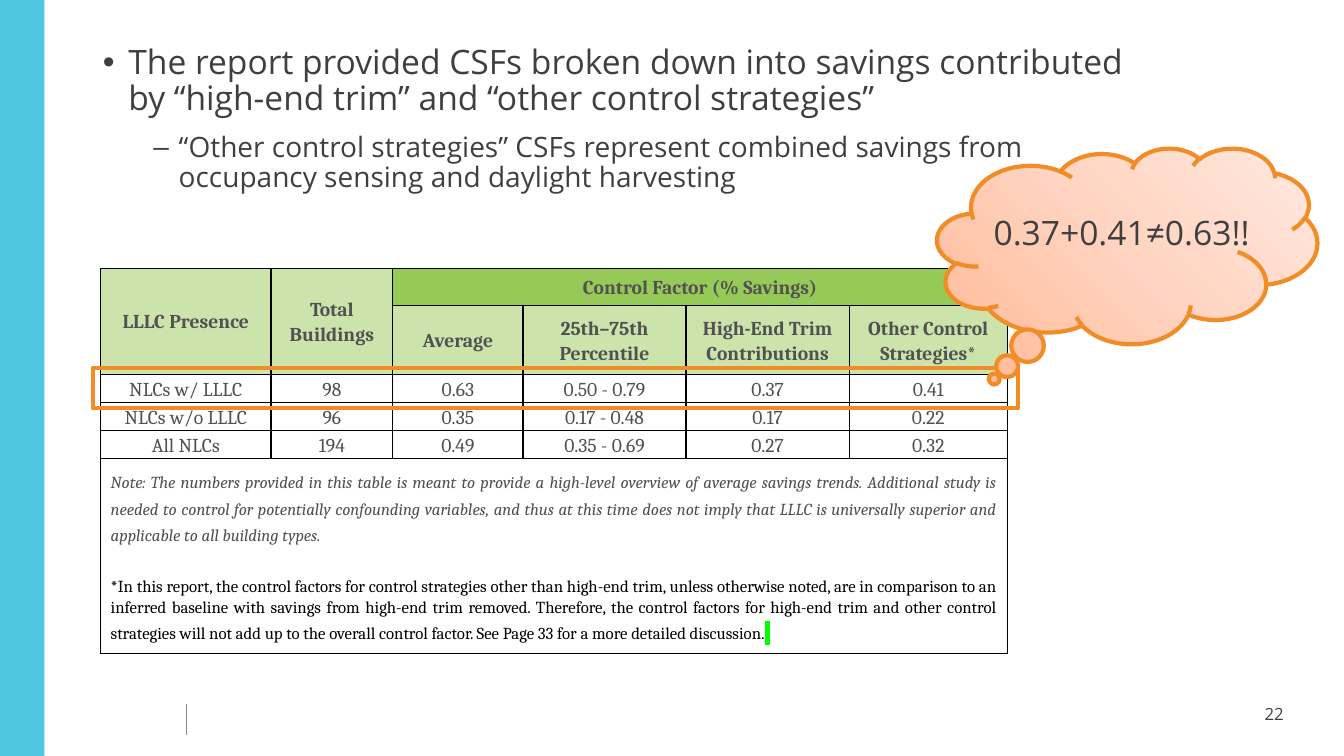
from copy import deepcopy
from pptx import Presentation
from pptx.dml.color import RGBColor
from pptx.enum.shapes import MSO_CONNECTOR, MSO_SHAPE
from pptx.enum.text import MSO_ANCHOR, MSO_AUTO_SIZE, PP_ALIGN
from pptx.oxml import parse_xml
from pptx.oxml.ns import nsdecls, qn
from pptx.util import Cm, Pt

# Content
BULLETS = [
    ("The report provided CSFs broken down into savings contributed by “high-end trim” and “other control strategies”",
     dict(level=0, bullet="•", left=0.64, size=24, before=0)),
    ("“Other control strategies” CSFs represent combined savings from occupancy sensing and daylight harvesting",
     dict(level=1, bullet="–", left=1.91, size=20, before=5)),
]
HEADERS = {  # (row, column): (text, fill, last row, last column)
    (0, 0): ("LLLC Presence", "CCE4AC", 1, 0),
    (0, 1): ("Total\nBuildings", "CCE4AC", 1, 1),
    (0, 2): ("Control Factor (% Savings)", "96CA58", 0, 5),
    (1, 2): ("Average", "CCE4AC", 1, 2),
    (1, 3): ("25th–75th Percentile", "CCE4AC", 1, 3),
    (1, 4): ("High-End Trim\nContributions", "CCE4AC", 1, 4),
    (1, 5): ("Other Control Strategies*", "CCE4AC", 1, 5),
}
DATA = [
    ("NLCs w/ LLLC", "98", "0.63", "0.50 - 0.79", "0.37", "0.41"),
    ("NLCs w/o LLLC", "96", "0.35", "0.17 - 0.48", "0.17", "0.22"),
    ("All NLCs", "194", "0.49", "0.35 - 0.69", "0.27", "0.32"),
]
NOTE = (
    "Note: The numbers provided in this table is meant to provide a high-level overview of average savings trends. "
    "Additional study is needed to control for potentially confounding variables, and thus at this time does not "
    "imply that LLLC is universally superior and applicable to all building types.")
FOOTNOTE = (
    "*In this report, the control factors for control strategies other than high-end trim, unless otherwise noted, "
    "are in comparison to an inferred baseline with savings from high-end trim removed. Therefore, the control "
    "factors for high-end trim and other control strategies will not add up to the overall control factor. "
    "See Page 33 for a more detailed discussion.")
CALLOUT = "0.37+0.41≠0.63!!"
PAGE = "22"

# Format
COLUMNS = [4.29, 3.07, 3.28, 4.11, 4.11, 3.99]
ROWS = [0.94, 1.73, 0.71, 0.71, 0.71, 4.9]
GRADIENT = [(0, "FFBB99"), (50, "FFD4C1"), (100, "FFE9E0")]
ORANGE, DARK, GREY = "F28C27", "3F3F3F", "515151"
SANS, SERIF = "Open Sans", "Cambria"


def rgb(value):
    return RGBColor.from_string(value)


def add_run(p, text, color, **fmt):
    r = p.add_run()
    r.text = text
    for name, value in fmt.items():
        setattr(r.font, name, value)
    r.font.color.rgb = rgb(color)
    return r


def add_box(kind, box, fill=None, line=None):
    sp = s.shapes.add_shape(kind, *map(Cm, box))
    sp.shadow.inherit = False
    if fill:
        sp.fill.solid()
        sp.fill.fore_color.rgb = rgb(fill)
    else:
        sp.fill.background()
    if line:
        sp.line.color.rgb, sp.line.width = rgb(line), Pt(3)
    else:
        sp.line.fill.background()
    return sp


def add_label(text, box, size):
    tf = s.shapes.add_textbox(*map(Cm, box)).text_frame
    tf.word_wrap = True
    add_run(tf.paragraphs[0], text, DARK, name=SANS, size=Pt(size))


def set_cell(cell, inset, fill=None):
    cell.vertical_anchor = MSO_ANCHOR.MIDDLE
    cell.margin_left = cell.margin_right = Cm(inset[0])
    cell.margin_top = cell.margin_bottom = Cm(inset[1])
    if fill:
        cell.fill.solid()
        cell.fill.fore_color.rgb = rgb(fill)


def write_cell(cell, text, bold):
    for i, line in enumerate(text.split("\n")):
        p = cell.text_frame.paragraphs[0] if i == 0 else cell.text_frame.add_paragraph()
        p.alignment, p.line_spacing = PP_ALIGN.CENTER, 1.12
        add_run(p, line, GREY, name=SERIF, size=Pt(14), bold=bold)


prs = Presentation()
prs.slide_width, prs.slide_height = Cm(33.87), Cm(19.05)
s = prs.slides.add_slide(prs.slide_layouts[1])
title = s.shapes.title
title.element.getparent().remove(title.element)

# Side band, footer rule and page number
add_box(MSO_SHAPE.RECTANGLE, (0, 0, 1.12, 19.05), fill="4FC6E0")
rule = s.shapes.add_connector(MSO_CONNECTOR.STRAIGHT, Cm(4.7), Cm(17.73), Cm(4.7), Cm(18.52))
rule.line.color.rgb, rule.line.width = rgb("8C8C8C"), Pt(1)
rule._element.spPr.append(parse_xml(f"<a:effectLst {nsdecls('a')}/>"))
add_label(PAGE, (31.62, 17.6, 1.42, 1.02), 12)

# Bullets
body = s.placeholders[1]
body.left, body.top, body.width, body.height = map(Cm, (2.34, 1.02, 26.85, 4.17))
tf = body.text_frame
tf.auto_size = MSO_AUTO_SIZE.NONE
for i, (text, fmt) in enumerate(BULLETS):
    p = tf.paragraphs[0] if i == 0 else tf.add_paragraph()
    pPr = p._p.get_or_add_pPr()
    pPr.set("marL", str(Cm(fmt["left"])))
    pPr.set("indent", str(Cm(-0.64)))
    pPr.append(parse_xml(f'<a:buChar {nsdecls("a")} char="{fmt["bullet"]}"/>'))
    for name, value in dict(level=fmt["level"], line_spacing=0.9, alignment=PP_ALIGN.LEFT,
                            space_before=Pt(fmt["before"]), space_after=Pt(6)).items():
        setattr(p, name, value)
    add_run(p, text, DARK, name=SANS, size=Pt(fmt["size"]))

# Table grid
frame = s.shapes.add_table(len(ROWS), len(COLUMNS), Cm(2.54), Cm(6.76), Cm(sum(COLUMNS)), Cm(sum(ROWS)))
table = frame.table
table.first_row = table.horz_banding = False
for column, width in zip(table.columns, COLUMNS):
    column.width = Cm(width)
for row, height in zip(table.rows, ROWS):
    row.height = Cm(height)
for cell in table.iter_cells():
    cell.fill.background()
    tcPr = cell._tc.get_or_add_tcPr()
    for i, side in enumerate("LRTB"):
        tcPr.insert(i, parse_xml(
            f'<a:ln{side} {nsdecls("a")} w="{Pt(1)}"><a:solidFill><a:srgbClr val="000000"/></a:solidFill></a:ln{side}>'))

# Table text
for (row, col), (text, fill, last_row, last_col) in HEADERS.items():
    cell = table.cell(row, col)
    if (row, col) != (last_row, last_col):
        cell.merge(table.cell(last_row, last_col))
    set_cell(cell, (0.25, 0.13) if row == 0 else (0.2, 0), fill)
    write_cell(cell, text, True)
for row, values in enumerate(DATA, 2):
    for col, text in enumerate(values):
        set_cell(table.cell(row, col), (0.2, 0))
        write_cell(table.cell(row, col), text, False)

# Notes row, ending in a highlighted space
cell = table.cell(5, 0)
cell.merge(table.cell(5, 5))
set_cell(cell, (0.25, 0.13))
p = cell.text_frame.paragraphs[0]
p.alignment, p.line_spacing = PP_ALIGN.JUSTIFY, 1.35
add_run(p, NOTE, GREY, name=SERIF, size=Pt(12), italic=True)
p = cell.text_frame.add_paragraph()
p.alignment, p.line_spacing = PP_ALIGN.JUSTIFY, 1.12
p.space_before, p.space_after = Pt(21), Pt(2.4)
add_run(p, FOOTNOTE, "000000", name=SERIF, size=Pt(12))
r = add_run(p, " ", "000000", name=SERIF, size=Pt(15))
r._r.rPr.find(qn("a:latin")).addprevious(
    parse_xml(f'<a:highlight {nsdecls("a")}><a:srgbClr val="00FF00"/></a:highlight>'))

# Row outline and thought cloud
add_box(MSO_SHAPE.RECTANGLE, (2.34, 9.27, 23.32, 1.02), line=ORANGE)
cloud = add_box(MSO_SHAPE.CLOUD_CALLOUT, (23.62, 3.73, 9.58, 4.93), line=ORANGE)
cloud.adjustments[0], cloud.adjustments[1] = -0.35, 0.681
cloud.fill.gradient()
cloud.fill.gradient_angle = 45
stops = cloud._element.spPr.find(".//" + qn("a:gsLst"))
stops.append(deepcopy(stops[-1]))
for stop, (position, color) in zip(cloud.fill.gradient_stops, GRADIENT):
    stop.position, stop.color.rgb = position / 100, rgb(color)
add_label(CALLOUT, (24.79, 5.21, 7.19, 1.27), 24)

prs.save("out.pptx")
